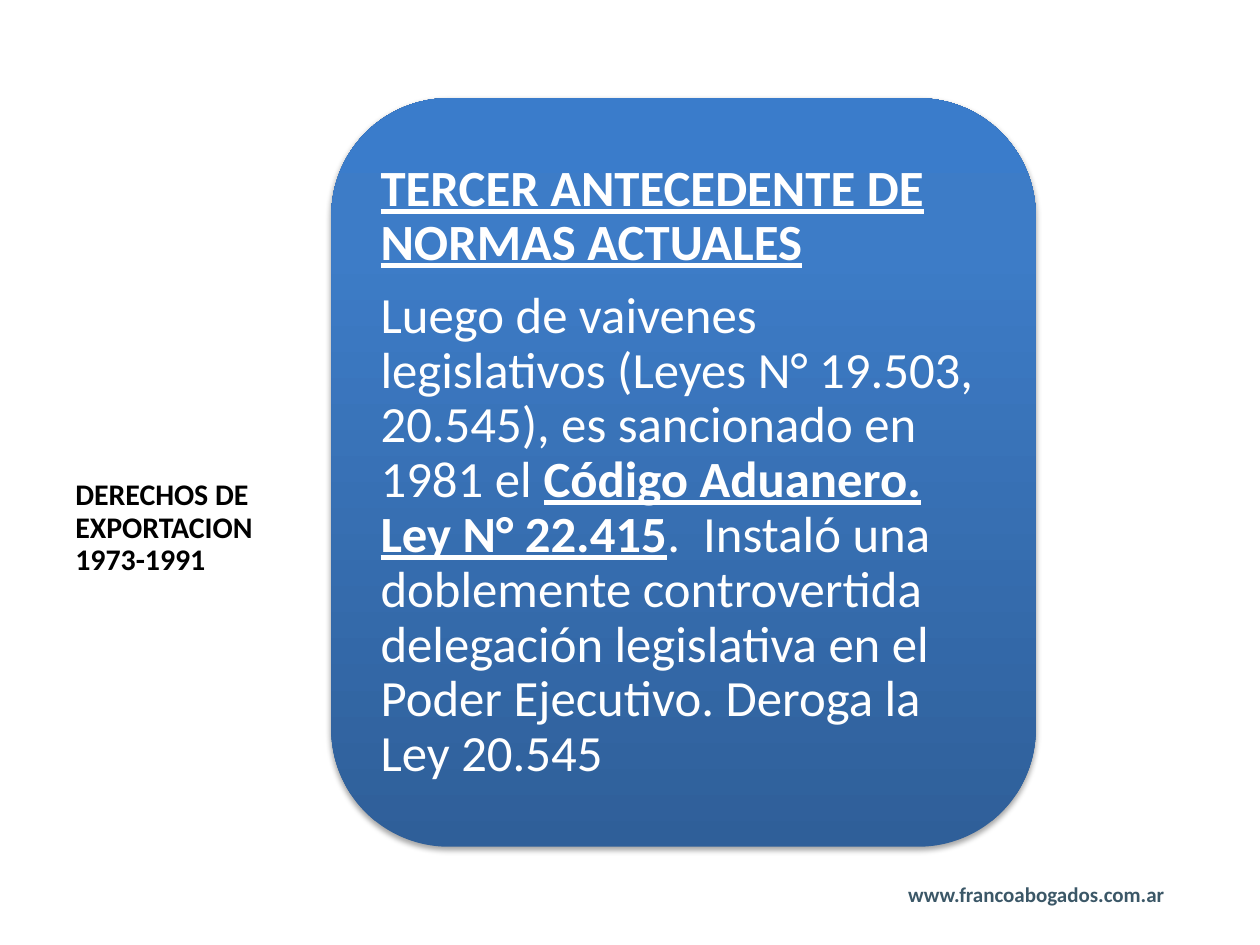
import copy
from dataclasses import dataclass

import lxml.etree
import pptx
import pptx.dml.color
import pptx.enum.shapes
import pptx.enum.text
import pptx.oxml.ns
import pptx.util

Cm = pptx.util.Cm
Pt = pptx.util.Pt
Anchor = pptx.enum.text.MSO_ANCHOR
qn = pptx.oxml.ns.qn


@dataclass(frozen=True)
class Theme:
    """Colours, font and type sizes of the slide."""
    font: str = "Calibri"
    dark: str = "000000"
    light: str = "FFFFFF"
    slate: str = "3B5767"
    blues: tuple = ((0, "2F5F99"), (0.8, "3D7CC7"), (1, "3A7CCB"))
    foot: float = 12
    title: float = 17.1
    body: float = 29
    lines: float = 0.9


THEME = Theme()


def rgb(code):
    """Turn a hex code into a colour."""
    return pptx.dml.color.RGBColor.from_string(code)


def style(run, size, color, bold=False, under=False):
    """Format one run of text."""
    font = run.font
    font.name = THEME.font
    font.size = Pt(size)
    font.color.rgb = rgb(color)
    font.bold = bold
    font.underline = under


def label(slide, box, text, size, color, anchor):
    """Place a bold text box and return its paragraph."""
    frame = slide.shapes.add_textbox(*map(Cm, box)).text_frame
    frame.word_wrap = True
    frame.vertical_anchor = anchor
    para = frame.paragraphs[0]
    para.text = text
    for run in para.runs:
        style(run, size, color, bold=True)
    return para


def title(slide, box):
    """Place the topic and period on the left."""
    text = "DERECHOS DE EXPORTACION\v1973-1991"
    para = label(slide, box, text, THEME.title, THEME.dark, Anchor.BOTTOM)
    para.line_spacing = THEME.lines


def footer(slide, box):
    """Place the web address."""
    text = "www.francoabogados.com.ar"
    label(slide, box, text, THEME.foot, THEME.slate, Anchor.TOP)


def shade(shape):
    """Give a shape the blue gradient and a soft shadow below."""
    shape.line.fill.background()
    shape.fill.gradient()
    shape.fill.gradient_angle = 90
    stops = shape._element.spPr.find(".//" + qn("a:gsLst"))
    stops.append(copy.deepcopy(stops[-1]))
    for stop, (place, color) in zip(shape.fill.gradient_stops, THEME.blues):
        stop.position = place
        stop.color.rgb = rgb(color)
    shape.shadow.inherit = False
    effects = shape._element.spPr.find(qn("a:effectLst"))
    shadow = lxml.etree.SubElement(
        effects, qn("a:outerShdw"), blurRad=str(Pt(3.1)), dist=str(Pt(1.8)),
        dir="5400000", rotWithShape="0")
    tint = lxml.etree.SubElement(shadow, qn("a:srgbClr"), val=THEME.dark)
    lxml.etree.SubElement(tint, qn("a:alpha"), val="35000")


def card(slide, box):
    """Place the rounded card with its heading and account."""
    kind = pptx.enum.shapes.MSO_SHAPE.ROUNDED_RECTANGLE
    shape = slide.shapes.add_shape(kind, *map(Cm, box))
    shade(shape)
    frame = shape.text_frame
    frame.word_wrap = True
    frame.vertical_anchor = Anchor.MIDDLE
    frame.margin_left = frame.margin_right = Cm(0.3)
    frame.margin_top = frame.margin_bottom = Cm(0.3)
    texts = (
        (("TERCER ANTECEDENTE DE NORMAS ACTUALES", True),),
        (("Luego de vaivenes legislativos (Leyes N° 19.503, 20.545), "
          "es sancionado en 1981 el ", False),
         ("Código Aduanero. Ley N° 22.415", True),
         (".  Instaló una doblemente controvertida delegación legislativa "
          "en el Poder Ejecutivo. Deroga la Ley 20.545", False)),
    )
    for i, parts in enumerate(texts):
        para = frame.add_paragraph() if i else frame.paragraphs[0]
        para.alignment = pptx.enum.text.PP_ALIGN.LEFT
        para.line_spacing = THEME.lines
        para.space_after = Pt(10)
        for text, strong in parts:
            run = para.add_run()
            run.text = text
            style(run, THEME.body, THEME.light, strong, strong)


def main():
    """Build and save the slide."""
    deck = pptx.Presentation()
    deck.slide_width = Cm(25.4)
    deck.slide_height = Cm(19.05)
    slide = deck.slides.add_slide(deck.slide_layouts[6])
    footer(slide, (18.06, 17.65, 6.05, 0.76))
    title(slide, (1.27, 8.53, 5.41, 3.23))
    card(slide, (6.68, 1.98, 14.2, 15.09))
    deck.save("out.pptx")


if __name__ == "__main__":
    main()
